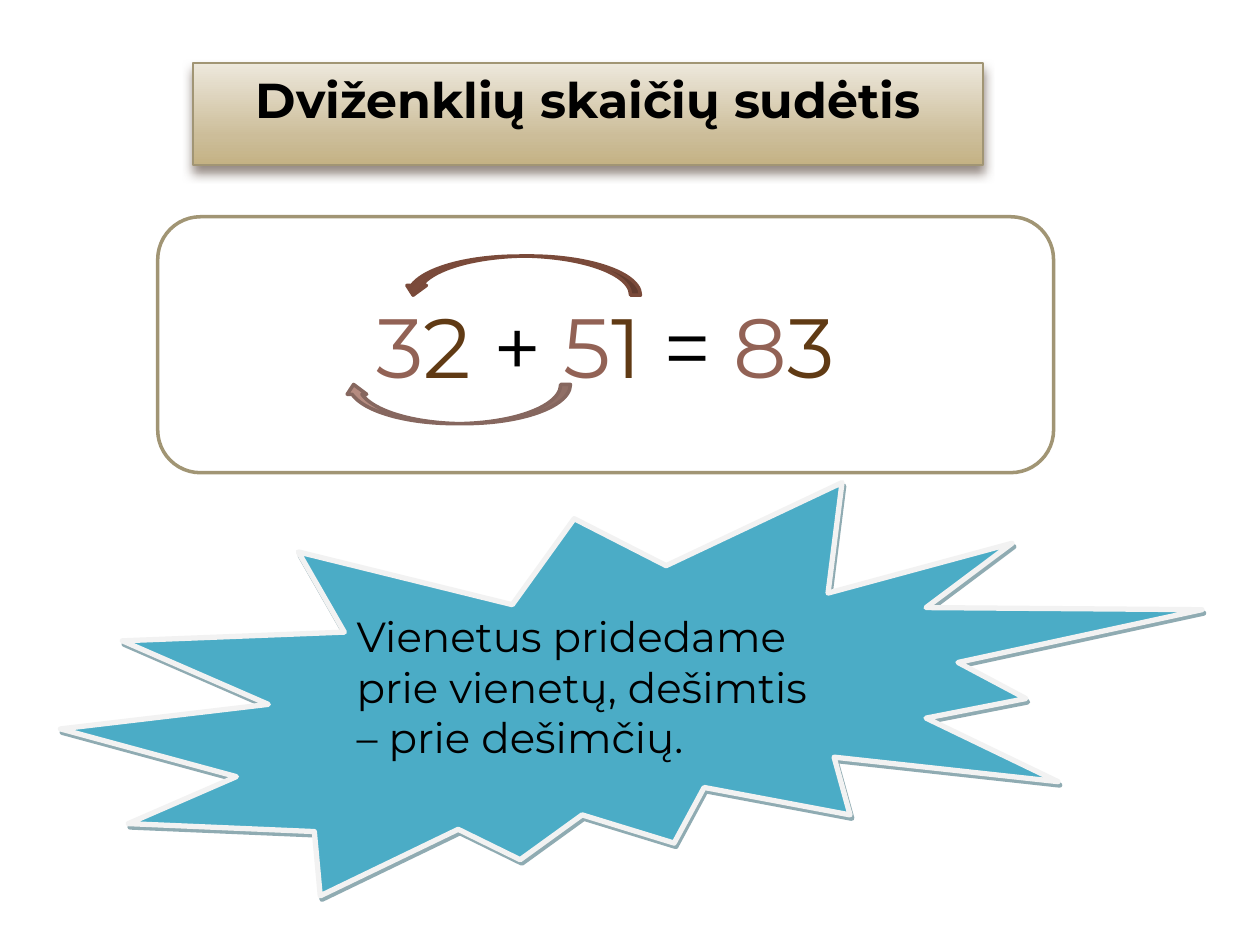
from dataclasses import dataclass

from lxml import etree
from pptx import Presentation
from pptx.dml.color import RGBColor
from pptx.enum.shapes import MSO_SHAPE
from pptx.enum.text import MSO_ANCHOR, MSO_AUTO_SIZE, PP_ALIGN
from pptx.oxml.ns import qn
from pptx.util import Cm, Pt

BURST = MSO_SHAPE.EXPLOSION2
ROUNDED = MSO_SHAPE.ROUNDED_RECTANGLE
ARROW_DOWN = MSO_SHAPE.CURVED_DOWN_ARROW
ARROW_UP = MSO_SHAPE.CURVED_UP_ARROW
LEFT, CENTER = PP_ALIGN.LEFT, PP_ALIGN.CENTER
TOP, MIDDLE = MSO_ANCHOR.TOP, MSO_ANCHOR.MIDDLE
NO_AUTOFIT = MSO_AUTO_SIZE.NONE

FONT = "Montserrat"
BLACK = "000000"
TENS = "926255"
UNITS = "603A14"
FRAME = "A19574"
TITLE_STOPS = ((0, "EDE8DC"), (72, "CCBD99"), (100, "C4B284"))


@dataclass(frozen=True)
class Figure:
    kind: int
    box: tuple[float, float, float, float]
    fill: str
    line: str
    line_width: float
    rotation: float = 0


@dataclass(frozen=True)
class Shadow:
    color: str
    opacity: float
    blur: float
    distance: float
    angle: float


RULE = Figure(BURST, (1.22, 9.73, 23.01, 8.33), "4BACC6", "F2F2F2", 3)
EQUATION = Figure(ROUNDED, (3.18, 4.37, 18.06, 5.16), "FFFFFF", FRAME, 2)
TENS_ARROW = Figure(ARROW_DOWN, (6.93, 7.75, 4.57, 0.79), "B58B80", "86675F", 2, 180)
UNITS_ARROW = Figure(ARROW_UP, (8.13, 5.16, 4.78, 0.79), "7C4B3B", "7A4A3A", 2, 180)
TITLE_BOX = (3.89, 1.27, 15.93, 2.06)


def rgb(color: str) -> RGBColor:
    return RGBColor.from_string(color)


def add_element(parent, tag: str, **attributes):
    values = {name: str(value) for name, value in attributes.items()}
    return etree.SubElement(parent, qn(tag), values)


def set_line(shape, color: str, width: float) -> None:
    shape.line.color.rgb = rgb(color)
    shape.line.width = Pt(width)


def set_shadow(shape, shadow: Shadow) -> None:
    shape.shadow.inherit = False
    effects = shape.element.spPr.find(qn("a:effectLst"))
    outer = add_element(effects, "a:outerShdw", blurRad=Pt(shadow.blur),
                        dist=Pt(shadow.distance), dir=round(shadow.angle * 60000),
                        algn="ctr", rotWithShape=0)
    tint = add_element(outer, "a:srgbClr", val=shadow.color)
    add_element(tint, "a:alpha", val=round(shadow.opacity * 1000))


def add_figure(slide, figure: Figure):
    shape = slide.shapes.add_shape(figure.kind, *map(Cm, figure.box))
    shape.rotation = figure.rotation
    shape.fill.solid()
    shape.fill.fore_color.rgb = rgb(figure.fill)
    set_line(shape, figure.line, figure.line_width)
    shape.shadow.inherit = False
    return shape


def write_text(shape, parts: list[tuple[str, str]], *, size: float,
               bold: bool = False, align=LEFT, anchor=TOP) -> None:
    frame = shape.text_frame
    frame.word_wrap = True
    frame.auto_size = NO_AUTOFIT
    frame.vertical_anchor = anchor
    paragraph = frame.paragraphs[0]
    paragraph.alignment = align
    for text, color in parts:
        run = paragraph.add_run()
        run.text = text
        run.font.name = FONT
        run.font.size = Pt(size)
        run.font.bold = bold
        run.font.color.rgb = rgb(color)


def format_title(title) -> None:
    title.left, title.top, title.width, title.height = map(Cm, TITLE_BOX)
    properties = title.element.spPr
    geometry = add_element(properties, "a:prstGeom", prst="roundRect")
    add_element(geometry, "a:avLst")
    gradient = add_element(properties, "a:gradFill", rotWithShape=1)
    stops = add_element(gradient, "a:gsLst")
    for position, color in TITLE_STOPS:
        stop = add_element(stops, "a:gs", pos=position * 1000)
        add_element(stop, "a:srgbClr", val=color)
    add_element(gradient, "a:lin", ang=90 * 60000, scaled=0)
    set_line(title, FRAME, 0.79)
    set_shadow(title, Shadow("4E3B30", 60, 6, 4, 90))
    write_text(title, [("Dviženklių skaičių sudėtis", BLACK)],
               size=28, bold=True, align=CENTER)


def main() -> None:
    presentation = Presentation()
    presentation.slide_width = Cm(25.4)
    presentation.slide_height = Cm(19.05)
    slide = presentation.slides.add_slide(presentation.slide_layouts[5])
    format_title(slide.shapes.title)

    rule = add_figure(slide, RULE)
    set_shadow(rule, Shadow("205867", 50, 0, 2.2, 63))
    write_text(rule, [("Vienetus pridedame prie vienetų, dešimtis – prie dešimčių.", BLACK)],
               size=24)

    equation = add_figure(slide, EQUATION)
    write_text(equation, [("3", TENS), ("2 ", UNITS), ("+ ", BLACK), ("5", TENS),
                          ("1", UNITS), (" = ", BLACK), ("8", TENS), ("3", UNITS)],
               size=48, align=CENTER, anchor=MIDDLE)

    for arrow in (TENS_ARROW, UNITS_ARROW):
        add_figure(slide, arrow)

    presentation.save("out.pptx")


if __name__ == "__main__":
    main()
